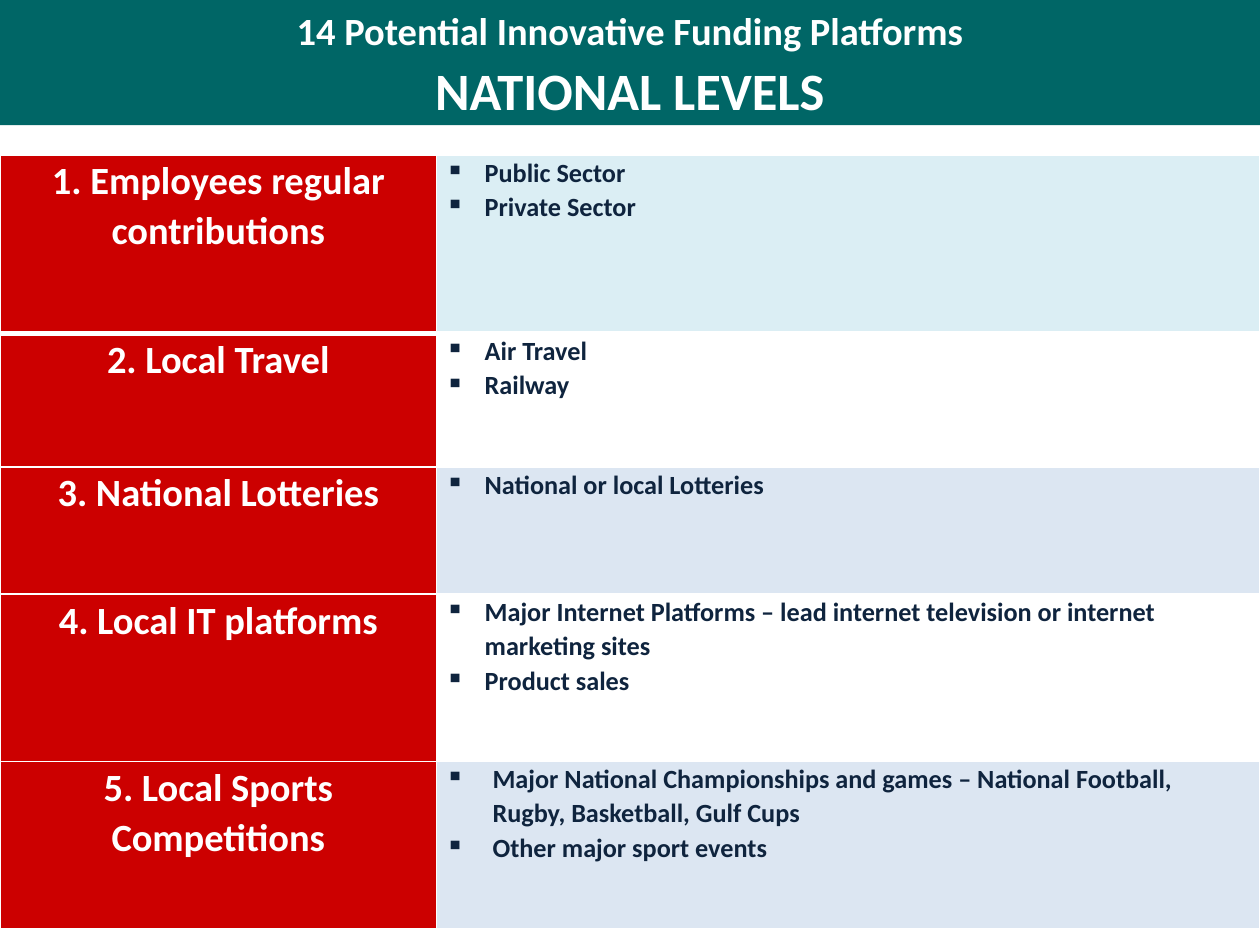
import pptx
import pptx.dml.color
import pptx.enum.text
import pptx.oxml
import pptx.oxml.ns
import pptx.util
from dataclasses import dataclass

Pt = pptx.util.Pt
Align = pptx.enum.text.PP_ALIGN
Anchor = pptx.enum.text.MSO_ANCHOR


@dataclass(frozen=True)
class Theme:
    font: str = "Calibri"
    banner: str = "006666"
    label: str = "CC0000"
    white: str = "FFFFFF"
    ink: str = "0F243E"
    aqua: str = "DBEEF4"
    blue: str = "DCE6F2"
    heading_size: float = 30
    label_size: float = 22
    item_size: float = 15
    line_spacing: float = 1.07


theme = Theme()

platforms = [
    ("1. Employees regular contributions", ["Public Sector", "Private Sector"], theme.aqua, 102, 22.5),
    ("2. Local Travel", ["Air Travel", "Railway"], theme.white, 76.3, 22.5),
    ("3. National Lotteries", ["National or local Lotteries"], theme.blue, 72.8, 22.5),
    ("4. Local IT platforms",
     ["Major Internet Platforms – lead internet television or internet marketing sites", "Product sales"],
     theme.white, 95.5, 22.5),
    ("5. Local Sports Competitions",
     ["Major National Championships and games – National Football, Rugby, Basketball, Gulf Cups",
      "Other major sport events"],
     theme.blue, 95.5, 27),
]


def format_paragraph(paragraph, size, color, alignment):
    paragraph.alignment = alignment
    paragraph.line_spacing = theme.line_spacing
    paragraph.space_before = paragraph.space_after = Pt(0)
    for run in paragraph.runs:
        run.font.name = theme.font
        run.font.size = Pt(size)
        run.font.bold = True
        run.font.color.rgb = pptx.dml.color.RGBColor.from_string(color)


def format_cell(cell, fill, bottom_width):
    cell.fill.solid()
    cell.fill.fore_color.rgb = pptx.dml.color.RGBColor.from_string(fill)
    cell.margin_left = cell.margin_right = Pt(5)
    cell.margin_top = cell.margin_bottom = Pt(0)
    cell.vertical_anchor = Anchor.TOP
    properties = cell._tc.get_or_add_tcPr()
    for index, (side, width) in enumerate([("L", 1), ("R", 1), ("T", 1), ("B", bottom_width)]):
        properties.insert(index, pptx.oxml.parse_xml(
            f'<a:ln{side} {pptx.oxml.ns.nsdecls("a")} w="{Pt(width)}"><a:solidFill>'
            f'<a:srgbClr val="{theme.white}"/></a:solidFill></a:ln{side}>'))


presentation = pptx.Presentation()
presentation.slide_width = Pt(720)
presentation.slide_height = Pt(540)
slide = presentation.slides.add_slide(presentation.slide_layouts[5])

title = slide.shapes.title
title.left, title.top, title.width, title.height = Pt(0), Pt(0), Pt(720), Pt(71.5)
title.fill.solid()
title.fill.fore_color.rgb = pptx.dml.color.RGBColor.from_string(theme.banner)
title.text_frame.auto_size = pptx.enum.text.MSO_AUTO_SIZE.NONE
title.text_frame.vertical_anchor = Anchor.MIDDLE
title.text_frame.text = "14 Potential Innovative Funding Platforms\vNATIONAL LEVELS"
heading = title.text_frame.paragraphs[0]
format_paragraph(heading, theme.label_size, theme.white, Align.CENTER)
heading.runs[1].font.size = Pt(theme.heading_size)

table_height = sum(height for *_, height, _ in platforms)
table = slide.shapes.add_table(len(platforms), 2, Pt(0), Pt(88.5), Pt(720), Pt(table_height)).table
table.first_row = False
table.horz_banding = False
table.columns[0].width = Pt(249.5)
table.columns[1].width = Pt(470.5)

for row_index, (label, items, fill, height, indent) in enumerate(platforms):
    table.rows[row_index].height = Pt(height)
    bottom_width = 3 if row_index == 0 else 1
    label_cell, items_cell = table.cell(row_index, 0), table.cell(row_index, 1)
    format_cell(label_cell, theme.label, bottom_width)
    format_cell(items_cell, fill, bottom_width)
    label_cell.text_frame.text = label
    format_paragraph(label_cell.text_frame.paragraphs[0], theme.label_size, theme.white, Align.CENTER)
    items_cell.text_frame.text = "\n".join(items)
    for paragraph in items_cell.text_frame.paragraphs:
        format_paragraph(paragraph, theme.item_size, theme.ink, Align.LEFT)
        properties = paragraph._p.get_or_add_pPr()
        properties.set("marL", str(Pt(indent)))
        properties.set("indent", str(-Pt(indent)))
        properties.append(pptx.oxml.parse_xml(f'<a:buChar {pptx.oxml.ns.nsdecls("a")} char="▪"/>'))

presentation.save("out.pptx")
